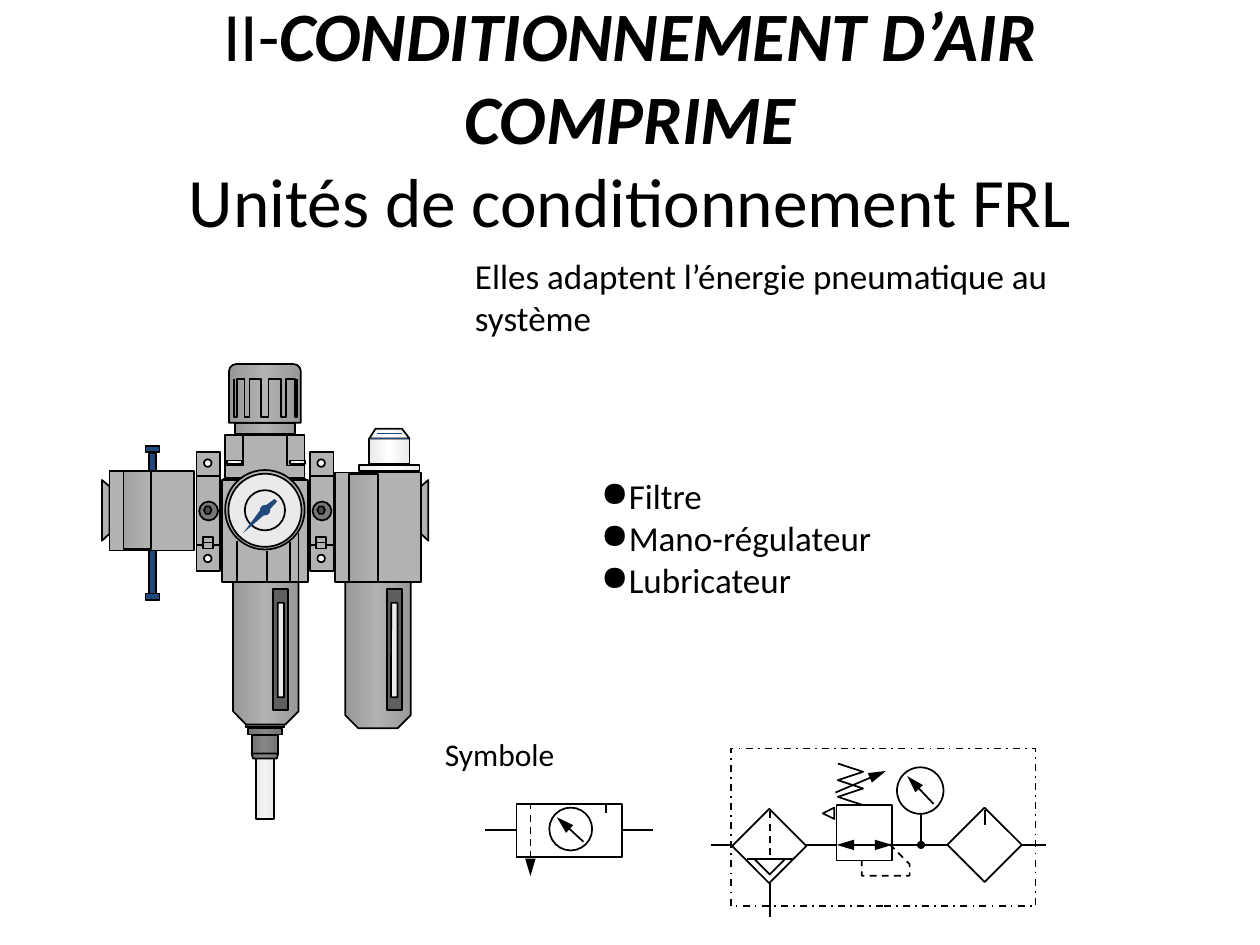
import pptx
import pptx.util
import pptx.dml.color
import pptx.enum.dml
import pptx.enum.shapes
import pptx.enum.text
import pptx.oxml.ns
from lxml import etree

Pt = pptx.util.Pt
qn = pptx.oxml.ns.qn
SHAPES = pptx.enum.shapes.MSO_SHAPE
DASHES = pptx.enum.dml.MSO_LINE

BLACK, BLUE = "000000", "1F497D"
STYLES = {
    "body": {"fill": ["B2B2B2"]},
    "blue": {"fill": [BLUE]},
    "white": {"fill": ["FFFFFF"]},
    "pale": {"fill": ["EAEAEA"]},
    "screw": {"fill": ["777777"]},
    "socket": {"fill": ["4D4D4D"]},
    "window": {"fill": ["5F5F5F"]},
    "black": {"fill": [BLACK]},
    "tube": {"fill": ["EAEAEA", "F3F3F3", "EAEAEA"]},
    "drain": {"fill": ["737373", "868686", "737373"]},
    "metal": {"fill": ["989898", "B2B2B2", "989898"]},
    "silver": {"fill": ["DADADA", "FFFFFF", "DADADA"]},
    "cap": {"fill": ["EAEAEA", "FFFFFF", "EAEAEA"]},
    "sheen": {"fill": ["A2A2A2", "B2B2B2"]},
    "needle": {"fill": [BLUE], "line": None},
    "outline": {},
    "blue line": {"line": BLUE},
    "dashed": {"dash": DASHES.DASH},
    "frame": {"dash": DASHES.DASH_DOT},
    "arrow": {"heads": ["tailEnd"]},
    "double arrow": {"heads": ["headEnd", "tailEnd"]},
    "dashed arrow": {"dash": DASHES.DASH, "heads": ["tailEnd"]},
}
ADJUSTMENTS = {
    "ROUNDED_RECTANGLE": [0.125],
    "SNIP_2_SAME_RECTANGLE": [0, 0.2],
    "ROUND_2_SAME_RECTANGLE": [0.12, 0],
}
ROTATIONS = {"ISOSCELES_TRIANGLE": 270, "TRAPEZOID": 180}

AXIS = 151.4
BRACKET_GAP = 64.8
UNIT_SPAN = 303.1


def centred(width, top, height):
    return AXIS - width / 2, top, width, height


def pair(*place, gap=BRACKET_GAP):
    return [place, (place[0] + gap, *place[1:])]


def mirrored(points, span):
    return [points, [(span - x, y) for x, y in points]]


RIDGES = [133.9, 135.4, 139.7, 142.6, 149, 153.4, 160.6, 163.4, 168.5, 169.9]
RIDGE_ENDS = [216.7, 238.3]
ridge = [(x, y) for index, x in enumerate(RIDGES) for y in RIDGE_ENDS[::1 - 2 * (index % 2)]]
spring = [((478.8, 493.2)[turn % 2], 436.3 + 4.76 * turn) for turn in range(6)]
port = [(62.6, 278), (58.3, 274.3), (58.3, 309), (62.6, 305)]
notch = [(139, 249), (139, 266), (129, 266)]

FRL_UNIT = [
    ("RECTANGLE", "blue", [(85, 259.2, 4.3, 79.9)]),
    ("RECTANGLE", "body", [centred(49, 274.3, 58.3)]),
    ("RECTANGLE", "tube", [centred(10.1, 433.4, 34.6)]),
    ("RECTANGLE", "drain", [centred(15.1, 419.8, 10.8), centred(19.4, 416.2, 3.6), centred(22.3, 414, 1.4)]),
    ("SNIP_2_SAME_RECTANGLE", "metal", [(133.2, 332.6, 37.4, 81.4), (197.3, 332.6, 37.4, 83.6)]),
    ("TRAPEZOID", "drain", [centred(15.1, 430.6, 2.8)]),
    ("closed", "body", mirrored(port, UNIT_SPAN)),
    ("RECTANGLE", "body", [(62.6, 269.3, 48.3, 45.3)]),
    ("RECTANGLE", "blue", [(83.2, y, 7.9, 3.6) for y in (254.9, 339.1)]),
    ("RECTANGLE", "body", pair(112.3, 258.2, 13.5, 68)),
    ("across", "outline", pair(112.3, 272.2, 14) + pair(112.3, 311.5, 14)),
    ("OVAL", "white", pair(116.6, 262.5, 4.3) + pair(116.6, 317, 4.3)),
    ("RECTANGLE", "body", pair(115.9, 307, 5.8, 6.5)),
    ("across", "outline", pair(115.9, 310, 5.8)),
    ("OVAL", "screw", pair(113.8, 286.6, 10.8)),
    ("HEXAGON", "socket", pair(116.6, 289.4, 4.3)),
    ("down", "outline", [(x, y, 332.3 - y) for x, y in
                         [(135.4, 309), (152.6, 314.6), (165.6, 309.6), (170.6, 304.6)]]),
    ("across", "outline", [(127.4, 273.6, 47.6)]),
    ("RECTANGLE", "body", [centred(45.4, 248.4, 24.5)]),
    ("RECTANGLE", "metal", [centred(34.6, 241.9, 5.8)]),
    ("ROUND_2_SAME_RECTANGLE", "metal", [centred(41, 208.1, 33.5)]),
    ("open", "outline", [ridge, *mirrored(notch, UNIT_SPAN)]),
    ("RECTANGLE", "silver", pair(129.6, 263.2, 8.6, 2.2, gap=36)),
    ("RECTANGLE", "body", [(191.5, 270, 49, 62.6)]),
    ("RECTANGLE", "cap", [(205.2, 265.7, 34.6, 3.6), (211, 250.6, 23, 14.8)]),
    ("closed", "cap", [[(211, 250.6), (214.6, 245), (229.7, 245), (234, 250.6)]]),
    ("OVAL", "body", [centred(45.4, 268.6, 45.4)]),
    ("OVAL", "pale", [centred(41.8, 270.7, 41.8)]),
    ("OVAL", "outline", [centred(23, 280.1, 23)]),
    ("closed", "needle", [[(157, 285.1), (158.4, 286.6), (152.5, 293), (139, 304.6), (149.5, 290.5)]]),
    ("OVAL", "needle", [(148.5, 288.5, 6)]),
    ("RECTANGLE", "sheen", [(199.4, 270.7, 16.6, 61.9), (70.6, 269.3, 15.8, 44.6)]),
    ("across", "blue line", [(215.3, 247.7, 14.4), (211.7, 250.6, 21.6)]),
    ("RECTANGLE", "window", pair(156.2, 336.6, 8.6, 69.1)),
    ("ROUNDED_RECTANGLE", "pale", pair(158.7, 344.5, 3.6, 54)),
]

SIMPLE_SYMBOL = [
    ("RECTANGLE", "outline", [(295.2, 459.4, 60.5, 30.2)]),
    ("OVAL", "outline", [(313.9, 461.5, 24.5)]),
    ("line", "arrow", [(333.4, 481, 318.2, 467)]),
    ("down", "dashed arrow", [(303.1, 458.6, 42)]),
    ("down", "outline", [(346.3, 458.6, 5.8)]),
    ("across", "outline", [(277.2, 474.5, 18), (355.7, 474.5, 17.3)]),
]

DETAILED_SYMBOL = [
    ("DIAMOND", "outline", [(418.3, 462.2, 42.5), (541.4, 461.5, 42.5)]),
    ("across", "outline", [(x, 482.8, length) for x, length in
                           [(406.1, 12.2), (460.8, 17.3), (509.8, 31.6), (583.9, 13.7)]]),
    ("down", "outline", [(439.9, 504, 20.2), (526.3, 465.1, 17.3), (563, 463, 8.6)]),
    ("across", "outline", [(427, 491, 26.6)]),
    ("open", "outline", [[(448.6, 491), (439.9, 499.7), (431.3, 491)], spring]),
    ("OVAL", "outline", [(512.6, 438.5, 26.6)]),
    ("RECTANGLE", "outline", [(478.1, 460.1, 31.7)]),
    ("across", "double arrow", [(478.1, 482.8, 31.7)]),
    ("open", "dashed", [[(508.3, 482.4), (519.8, 493.9), (519.8, 500.4), (492.5, 500.4), (492.5, 491.8)]]),
    ("line", "arrow", [(477.4, 452.9, 506.2, 440.6), (533.5, 459.4, 518.4, 443.5)]),
    ("OVAL", "black", [(524.5, 481, 3.6)]),
    ("down", "dashed", [(439.9, 463.7, 27.3)]),
    ("ISOSCELES_TRIANGLE", "outline", [(470.2, 461.5, 6.5)]),
    ("RECTANGLE", "frame", [(417.6, 427.7, 174.2, 90)]),
]

TITLE = [[("II-", False), ("CONDITIONNEMENT D’AIR COMPRIME", True)], [("Unités de conditionnement FRL", False)]]
COMPONENTS = ["Filtre", "Mano-régulateur", "Lubricateur"]
PURPOSE = ["Elles adaptent l’énergie pneumatique au système"]


def color(hex_value):
    return pptx.dml.color.RGBColor.from_string(hex_value)


def paint(shape, fill=(), line=BLACK, dash=None, heads=()):
    if not hasattr(shape, "fill"):
        etree.SubElement(shape._element.spPr, qn("a:effectLst"))
    else:
        shape.shadow.inherit = False
        if not fill:
            shape.fill.background()
        elif len(fill) == 1:
            shape.fill.solid()
            shape.fill.fore_color.rgb = color(fill[0])
        else:
            shape.fill.gradient()
            shape.fill.gradient_angle = 0
            stops = shape._element.spPr.find(".//" + qn("a:gsLst"))
            stops.clear()
            for index, shade in enumerate(fill):
                stop = etree.SubElement(stops, qn("a:gs"), pos=str(100000 * index // (len(fill) - 1)))
                etree.SubElement(stop, qn("a:srgbClr"), val=shade)
    if line is None:
        shape.line.fill.background()
        return
    shape.line.color.rgb = color(line)
    shape.line.width = Pt(1)
    if dash is not None:
        shape.line.dash_style = dash
    for head in heads:
        etree.SubElement(shape.line._get_or_add_ln(), qn("a:" + head), type="triangle", w="med", len="lg")


def draw(slide, parts):
    group = slide.shapes.add_group_shape().shapes
    drawn = []
    for kind, style, places in parts:
        for place in places:
            if kind in ("line", "across", "down"):
                x, y, *end = place
                if kind == "across":
                    end = x + end[0], y
                elif kind == "down":
                    end = x, y + end[0]
                shape = group.add_connector(pptx.enum.shapes.MSO_CONNECTOR.STRAIGHT, *map(Pt, (x, y, *end)))
            elif kind in ("open", "closed"):
                points = [(Pt(x), Pt(y)) for x, y in place]
                outline = group.build_freeform(*points[0])
                outline.add_line_segments(points[1:], close=kind == "closed")
                shape = outline.convert_to_shape()
            else:
                x, y, width, *height = place
                shape = group.add_shape(getattr(SHAPES, kind), *map(Pt, (x, y, width, *(height or [width]))))
                for index, value in enumerate(ADJUSTMENTS.get(kind, [])):
                    shape.adjustments[index] = value
                shape.rotation = ROTATIONS.get(kind, 0)
            paint(shape, **STYLES[style])
            drawn.append(shape)
    return drawn


def add_run(paragraph, text, **font):
    run = paragraph.add_run()
    run.text = text
    for name, value in {"name": "Calibri", **font}.items():
        setattr(run.font, name, value)
    run.font.color.rgb = color(BLACK)


def write(shape, lines, size, bullet=None):
    frame = shape.text_frame
    margins = dict.fromkeys(["margin_left", "margin_top", "margin_right", "margin_bottom"], 0)
    for name, value in {**margins, "word_wrap": True, "vertical_anchor": pptx.enum.text.MSO_ANCHOR.TOP}.items():
        setattr(frame, name, value)
    for index, text in enumerate(lines):
        paragraph = frame.add_paragraph() if index else frame.paragraphs[0]
        paragraph.alignment = pptx.enum.text.PP_ALIGN.LEFT
        add_run(paragraph, text, size=Pt(size))
        if bullet:
            etree.SubElement(paragraph._p.get_or_add_pPr(), qn("a:buChar"), char=bullet)


deck = pptx.Presentation()
deck.slide_width, deck.slide_height = Pt(720), Pt(540)
slide = deck.slides.add_slide(deck.slide_layouts[5])

title = slide.shapes.title
title.left, title.top, title.width, title.height = map(Pt, (36, 21.6, 648, 90))
title.text_frame.auto_size = pptx.enum.text.MSO_AUTO_SIZE.NONE
title.text_frame.vertical_anchor = pptx.enum.text.MSO_ANCHOR.MIDDLE
heading = title.text_frame.paragraphs[0]
heading.alignment = pptx.enum.text.PP_ALIGN.CENTER
for index, runs in enumerate(TITLE):
    if index:
        heading.add_line_break()
    for text, strong in runs:
        add_run(heading, text, size=Pt(39.6), bold=strong, italic=strong)

symbol_panel = slide.shapes.add_shape(SHAPES.RECTANGLE, *map(Pt, (254.2, 419.8, 378, 108)))
paint(symbol_panel, ["FFFFFF"], None)
write(symbol_panel, ["Symbole"], 18)
draw(slide, FRL_UNIT)
write(slide.shapes.add_textbox(*map(Pt, (343.4, 271.4, 265, 95.8))), COMPONENTS, 20, "●")
write(slide.shapes.add_textbox(*map(Pt, (271.4, 145.4, 392.4, 48.2))), PURPOSE, 20)
housing, *_, inlet, outlet = draw(slide, SIMPLE_SYMBOL)
inlet.end_connect(housing, 1)
outlet.begin_connect(housing, 3)
draw(slide, DETAILED_SYMBOL)
deck.save("out.pptx")
